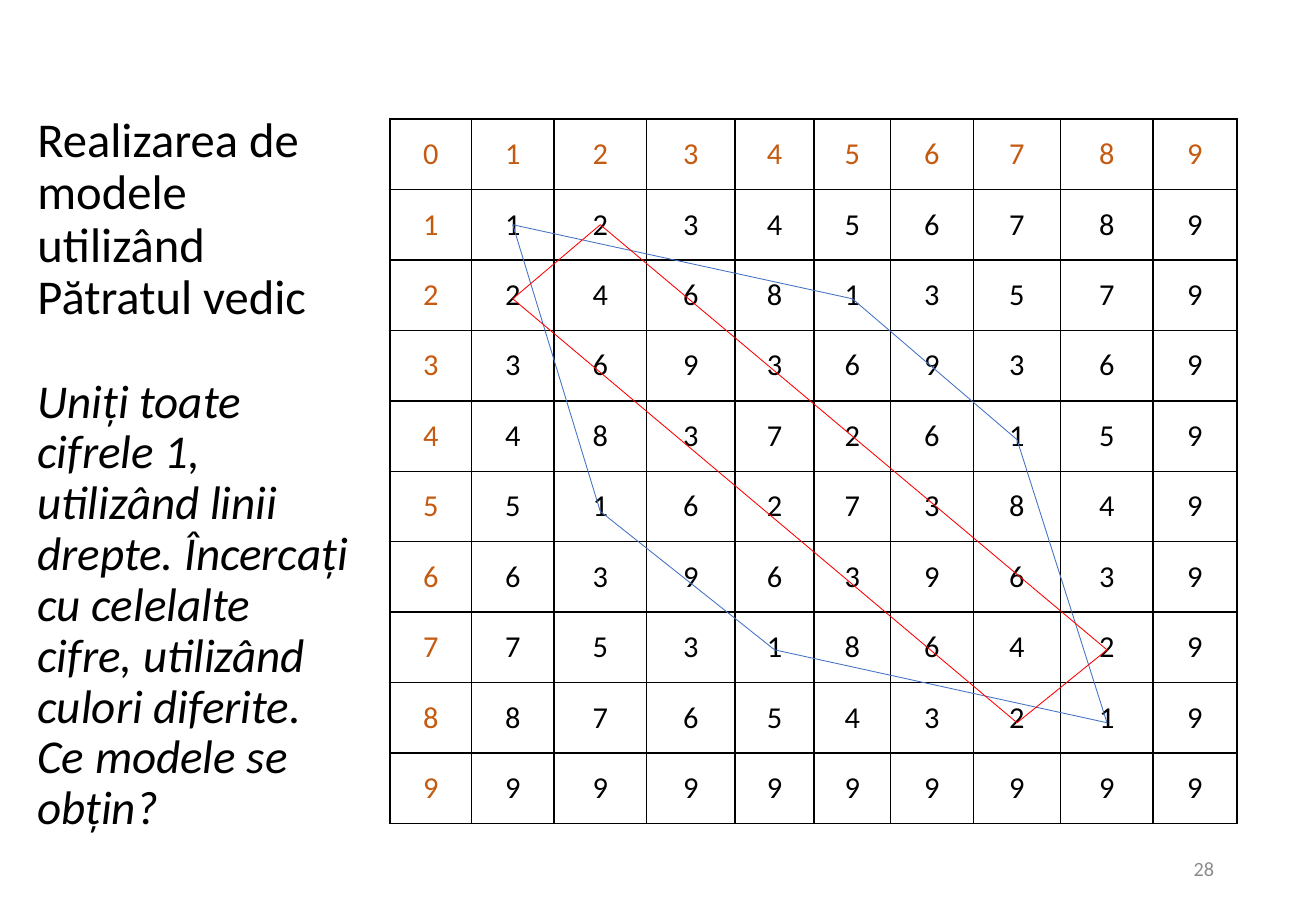
from dataclasses import dataclass
from itertools import accumulate

from lxml import etree
from pptx import Presentation
from pptx.dml.color import RGBColor
from pptx.enum.shapes import MSO_CONNECTOR
from pptx.enum.text import MSO_ANCHOR, PP_ALIGN
from pptx.oxml.ns import qn
from pptx.slide import Slide
from pptx.table import _Cell
from pptx.text.text import TextFrame
from pptx.util import Inches, Pt

STRAIGHT = MSO_CONNECTOR.STRAIGHT
TOP, MIDDLE = MSO_ANCHOR.TOP, MSO_ANCHOR.MIDDLE
LEFT, CENTER, RIGHT = PP_ALIGN.LEFT, PP_ALIGN.CENTER, PP_ALIGN.RIGHT

FONT = "Calibri"
BLACK, ORANGE, GRAY, BLUE, RED = "000000", "C55A11", "8C8C8C", "4472C4", "FF0000"

SQUARE_LEFT, SQUARE_TOP, ROW_HEIGHT = 3.21, 0.98, 0.58
COLUMN_WIDTHS = [0.67, 0.68, 0.76, 0.73, 0.65, 0.63, 0.68, 0.72, 0.76, 0.69]
SIZE = len(COLUMN_WIDTHS)
COLUMN_STARTS = list(accumulate(COLUMN_WIDTHS, initial=SQUARE_LEFT))
VERTEX_Y = {1: 1.85, 2: 2.46, 4: 3.62, 5: 4.21, 7: 5.35, 8: 5.95}


@dataclass(frozen=True)
class Passage:
    text: str
    size: float
    color: str = BLACK
    italic: bool = False
    align: PP_ALIGN = LEFT
    line_spacing: float = 1.0
    space_before: float = 0


@dataclass(frozen=True)
class Pattern:
    color: str
    vertices: tuple[tuple[int, int], ...]


INSTRUCTIONS = [
    Passage("Realizarea de modele utilizând Pătratul vedic", 28.8, line_spacing=0.9),
    Passage(
        "Uniți toate cifrele 1, utilizând linii drepte. Încercați cu celelalte "
        "cifre, utilizând culori diferite. Ce modele se obțin?",
        27.9, italic=True, line_spacing=0.9, space_before=31,
    ),
]
PATTERNS = [
    Pattern(BLUE, ((1, 1), (2, 5), (4, 7), (8, 8), (7, 4), (5, 2))),
    Pattern(RED, ((1, 2), (7, 8), (8, 7), (2, 1))),
]


def rgb(color: str) -> RGBColor:
    return RGBColor.from_string(color)


def write(frame: TextFrame, passages: list[Passage]) -> None:
    for index, passage in enumerate(passages):
        paragraph = frame.add_paragraph() if index else frame.paragraphs[0]
        paragraph.text = passage.text
        paragraph.alignment = passage.align
        paragraph.line_spacing = passage.line_spacing
        if index:
            paragraph.space_before = Pt(passage.space_before)
        paragraph.font.name = FONT
        paragraph.font.size = Pt(passage.size)
        paragraph.font.italic = passage.italic
        paragraph.font.color.rgb = rgb(passage.color)


def add_text(slide: Slide, left: float, top: float, width: float, height: float,
             anchor: MSO_ANCHOR, passages: list[Passage]) -> None:
    box = slide.shapes.add_textbox(Inches(left), Inches(top), Inches(width), Inches(height))
    box.text_frame.word_wrap = True
    box.text_frame.vertical_anchor = anchor
    write(box.text_frame, passages)


def add_borders(cell: _Cell) -> None:
    properties = cell._tc.get_or_add_tcPr()
    for side in ("a:lnL", "a:lnR", "a:lnT", "a:lnB"):
        border = etree.SubElement(properties, qn(side), w=str(Pt(1)))
        fill = etree.SubElement(border, qn("a:solidFill"))
        etree.SubElement(fill, qn("a:srgbClr"), val=BLACK)


def vedic_digit(row: int, column: int) -> int:
    if row == 0 or column == 0:
        return row + column
    return (row * column - 1) % 9 + 1


def add_vedic_square(slide: Slide) -> None:
    square = slide.shapes.add_table(
        SIZE, SIZE, Inches(SQUARE_LEFT), Inches(SQUARE_TOP),
        Inches(sum(COLUMN_WIDTHS)), Inches(SIZE * ROW_HEIGHT),
    ).table
    square.first_row = False
    square.horz_banding = False
    for column, width in enumerate(COLUMN_WIDTHS):
        square.columns[column].width = Inches(width)
    for row in range(SIZE):
        square.rows[row].height = Inches(ROW_HEIGHT)
        for column in range(SIZE):
            cell = square.cell(row, column)
            add_borders(cell)
            cell.fill.background()
            cell.vertical_anchor = MIDDLE
            cell.margin_left = cell.margin_right = Inches(0.08)
            cell.margin_top = cell.margin_bottom = Inches(0.05)
            color = BLACK if row and column else ORANGE
            digit = str(vedic_digit(row, column))
            write(cell.text_frame, [Passage(digit, 18, color, align=CENTER)])


def add_pattern(slide: Slide, pattern: Pattern) -> None:
    points = [
        (Inches(COLUMN_STARTS[column] + COLUMN_WIDTHS[column] / 2), Inches(VERTEX_Y[row]))
        for column, row in pattern.vertices
    ]
    for start, end in zip(points, points[1:] + points[:1]):
        edge = slide.shapes.add_connector(STRAIGHT, *start, *end)
        edge.line.color.rgb = rgb(pattern.color)
        edge.line.width = Pt(0.5)
        etree.SubElement(edge._element.spPr, qn("a:effectLst"))


def main() -> None:
    presentation = Presentation()
    presentation.slide_width = Inches(10.83)
    presentation.slide_height = Inches(7.5)
    slide = presentation.slides.add_slide(presentation.slide_layouts[6])
    add_text(slide, 0.21, 0.9, 2.81, 5.98, TOP, INSTRUCTIONS)
    add_vedic_square(slide)
    for pattern in PATTERNS:
        add_pattern(slide, pattern)
    add_text(slide, 7.65, 6.95, 2.44, 0.4, MIDDLE, [Passage("28", 12, GRAY, align=RIGHT)])
    presentation.save("out.pptx")


if __name__ == "__main__":
    main()
